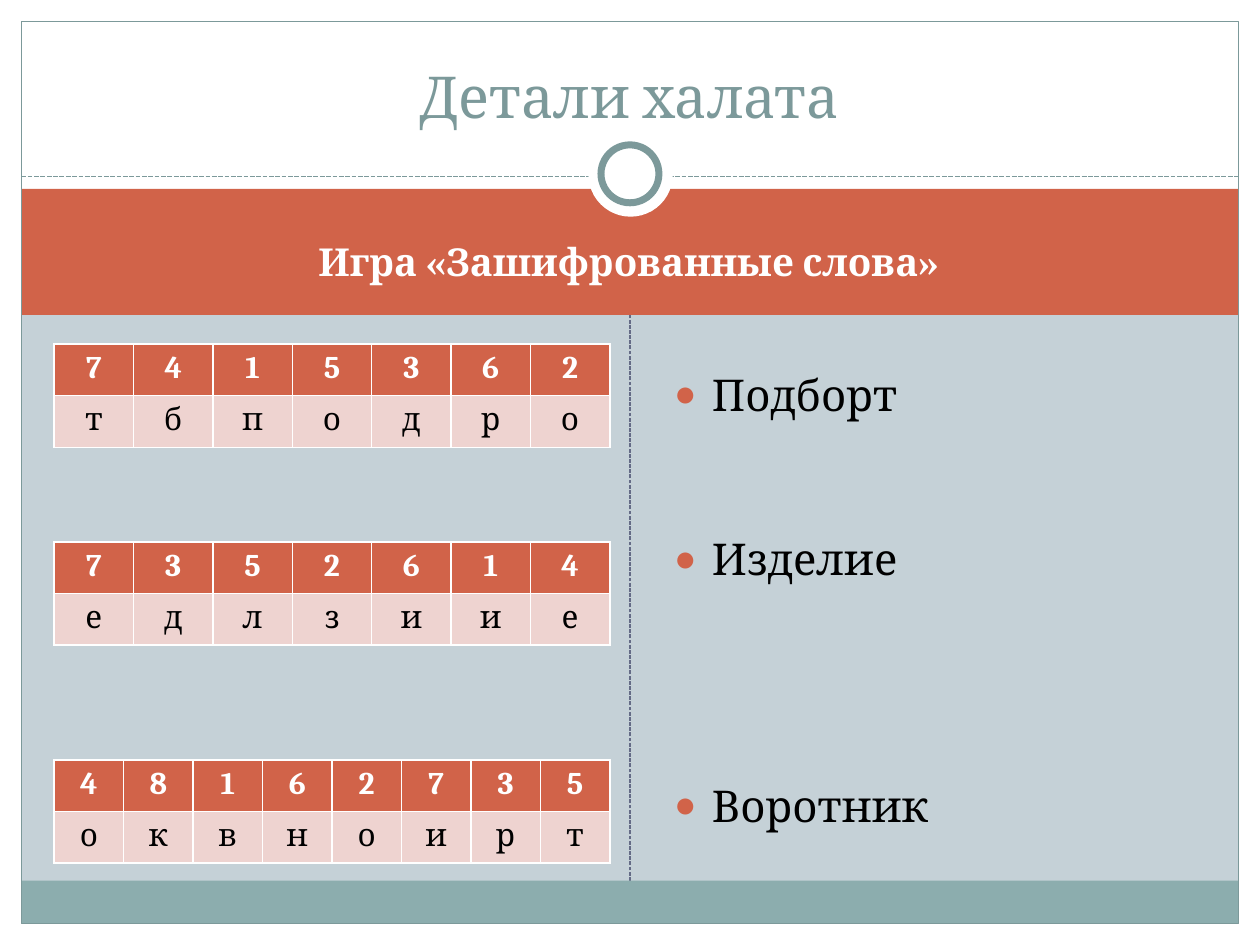
from lxml import etree
from pptx import Presentation
from pptx import util as u
from pptx.dml.color import RGBColor
from pptx.enum import dml, shapes, text
from pptx.oxml import ns

WIDE, HIGH = 10, 7.5
FONT = "Cambria"
WHITE, BLACK, RED, PINK = "FFFFFF", "000000", "D16349", "EED3D0"
TEAL, MINT, BLUE, PALE = "7C999A", "8CADAE", "646B86", "C5D1D7"
RECT, OVAL = shapes.MSO_SHAPE.RECTANGLE, shapes.MSO_SHAPE.OVAL

TITLE = "Детали халата"
GAME = "Игра «Зашифрованные слова»"
CODES = [
    (2.73, "7415362", "тбподро"),
    (4.3, "7352614", "едлзиие"),
    (6.03, "48162735", "оквноирт"),
]
WORDS = [("Подборт", 0), ("Изделие", 1), ("Воротник", 2)]
LEFT, SPAN, ROW = 0.43, 4.41, 0.41
GAP, PITCH = 5, 47

EDGE = 0.17
INNER = WIDE - 2 * EDGE
PANELS = [
    (RECT, (0, 0, WIDE, 1.58), WHITE),
    (RECT, (0, HIGH - EDGE, WIDE, EDGE), WHITE),
    (RECT, (0, 0, EDGE, HIGH), WHITE),
    (RECT, (WIDE - EDGE, 0, EDGE, HIGH), WHITE),
    (RECT, (EDGE, 1.5, INNER, 1), RED),
    (RECT, (EDGE, 6.99, INNER, 0.34), MINT),
]
FRAME = [
    (RECT, (EDGE, EDGE, INNER, HIGH - 2 * EDGE), None, TEAL, 0.75),
    (OVAL, (4.67, 1.05, 0.67, 0.67), WHITE),
    (OVAL, (4.77, 1.15, 0.46, 0.46), WHITE, TEAL, 4),
]


def hue(code):
    return RGBColor.from_string(code)


def inch(*nums):
    return [u.Inches(n) for n in nums]


def draw(kind, box, fill, line=None, width=0):
    form = slide.shapes.add_shape(kind, *inch(*box))
    form.shadow.inherit = False
    if fill:
        form.fill.solid()
        form.fill.fore_color.rgb = hue(fill)
    else:
        form.fill.background()
    if line:
        form.line.color.rgb = hue(line)
        form.line.width = u.Pt(width)
    else:
        form.line.fill.background()


def dash(ends, color, width):
    line = slide.shapes.add_connector(shapes.MSO_CONNECTOR.STRAIGHT, *inch(*ends))
    line.line.color.rgb = hue(color)
    line.line.width = u.Pt(width)
    line.line.dash_style = dml.MSO_LINE.SQUARE_DOT
    etree.SubElement(line._element.spPr, ns.qn("a:effectLst"))


def write(para, words, size, color, bold=False):
    run = para.add_run()
    run.text = words
    font = run.font
    font.name, font.size, font.bold = FONT, u.Pt(size), bold
    font.color.rgb = hue(color)


def place(spot, box, anchor):
    spot.left, spot.top, spot.width, spot.height = inch(*box)
    slide.shapes._spTree.append(spot._element)
    frame = spot.text_frame
    frame.word_wrap = True
    frame.auto_size = text.MSO_AUTO_SIZE.NONE
    frame.vertical_anchor = anchor
    return frame


def bullet(para):
    props = para._p.get_or_add_pPr()
    props.set("marL", str(u.Inches(0.3)))
    props.set("indent", str(-u.Inches(0.3)))
    tint = etree.SubElement(props, ns.qn("a:buClr"))
    etree.SubElement(tint, ns.qn("a:srgbClr"), val=RED)
    etree.SubElement(props, ns.qn("a:buSzPct"), val="85000")
    etree.SubElement(props, ns.qn("a:buChar"), char="●")


def code(top, keys, marks):
    count = len(keys)
    grid = slide.shapes.add_table(2, count, *inch(LEFT, top, SPAN, 2 * ROW)).table
    for col in grid.columns:
        col.width = u.Inches(SPAN / count)
    looks = [(keys, RED, WHITE, True), (marks, PINK, BLACK, False)]
    for r, (signs, fill, color, bold) in enumerate(looks):
        grid.rows[r].height = u.Inches(ROW)
        for c, sign in enumerate(signs):
            cell = grid.cell(r, c)
            cell.fill.solid()
            cell.fill.fore_color.rgb = hue(fill)
            para = cell.text_frame.paragraphs[0]
            para.alignment = text.PP_ALIGN.CENTER
            write(para, sign, 18, color, bold)


deck = Presentation()
deck.slide_width, deck.slide_height = inch(WIDE, HIGH)
slide = deck.slides.add_slide(deck.slide_layouts[4])
slide.background.fill.solid()
slide.background.fill.fore_color.rgb = hue(PALE)
spots = {s.placeholder_format.idx: s for s in slide.placeholders}
for idx in (3, 4):
    slide.shapes._spTree.remove(spots[idx]._element)

dash((WIDE / 2, 6.99, WIDE / 2, 2.41), BLUE, 0.75)
for panel in PANELS:
    draw(*panel)
dash((EDGE, 1.4, WIDE - EDGE, 1.4), TEAL, 0.9)
for part in FRAME:
    draw(*part)

HEADS = [
    (1, (0.33, 1.67, 9.32, 0.8), text.MSO_ANCHOR.MIDDLE, GAME, 22, WHITE, True),
    (0, (0.33, 0.25, 9.33, 0.83), text.MSO_ANCHOR.BOTTOM, TITLE, 33, TEAL, False),
]
for idx, box, anchor, words, size, color, bold in HEADS:
    para = place(spots[idx], box, anchor).paragraphs[0]
    para.alignment = text.PP_ALIGN.CENTER
    write(para, words, size, color, bold)

body = place(spots[2], (5.25, 2.7, 4.42, 4.18), text.MSO_ANCHOR.TOP)
for n, (word, skip) in enumerate(WORDS):
    para = body.add_paragraph() if n else body.paragraphs[0]
    para.line_spacing = 1.4
    para.space_before = u.Pt(GAP + skip * PITCH)
    bullet(para)
    write(para, word, 25, BLACK)

for item in CODES:
    code(*item)

deck.save("out.pptx")
